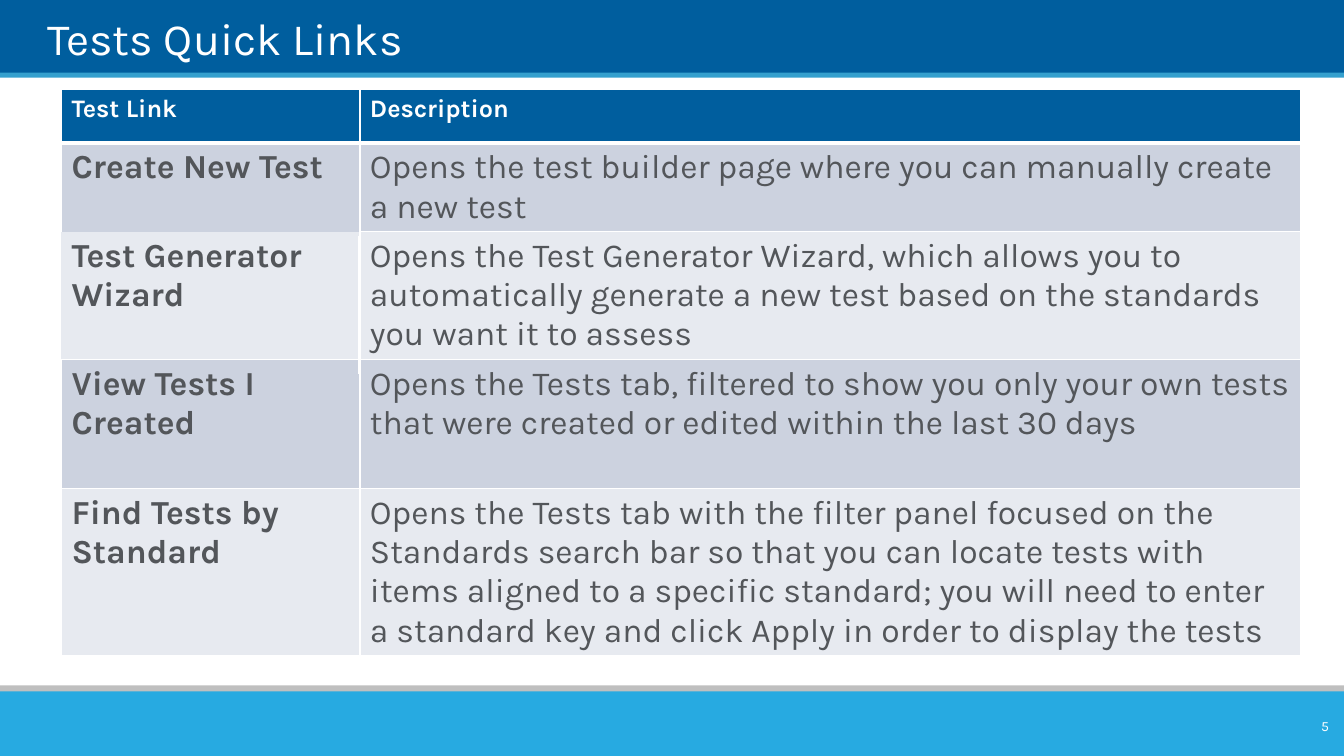
"""Build the Tests Quick Links slide."""
from dataclasses import dataclass

from lxml import etree
from pptx import Presentation
from pptx.dml.color import RGBColor
from pptx.enum import shapes, text
from pptx.oxml import ns
from pptx.util import Inches, Pt


@dataclass(frozen=True)
class Theme:
    """Colours, font and type sizes."""
    font: str = "Karla"
    navy: str = "005E9E"
    rule: str = "35A0CE"
    grey: str = "BFBFBF"
    sky: str = "27AAE1"
    white: str = "FFFFFF"
    ink: str = "53565A"
    odd_row: str = "CCD2DF"
    even_row: str = "E7EAF0"
    title_size: int = 32
    body_size: int = 24
    header_size: int = 18
    number_size: int = 10


@dataclass(frozen=True)
class Band:
    """A full-width colour band."""
    top: float
    height: float
    color: str


@dataclass(frozen=True)
class Label:
    """A text box with its format."""
    wording: str
    box: tuple
    size: int
    anchor: text.MSO_ANCHOR
    align: text.PP_ALIGN
    margins: tuple


@dataclass(frozen=True)
class QuickLink:
    """A table row with its height."""
    name: str
    description: str
    height: float
    bordered: bool = True


THEME = Theme()
SLIDE_WIDTH = 13.33
BANDS = (
    Band(-0.01, 0.75, THEME.navy),
    Band(0.72, 0.05, THEME.rule),
    Band(6.8, 0.14, THEME.grey),
    Band(6.86, 0.64, THEME.sky),
)
LABELS = (
    Label("Tests Quick Links", (0.47, 0.07, 12.43, 0.57), THEME.title_size,
          text.MSO_ANCHOR.BOTTOM, text.PP_ALIGN.LEFT, (0, 0, 0, 0)),
    Label("5", (12.51, 7.05, 0.77, 0.3), THEME.number_size,
          text.MSO_ANCHOR.MIDDLE, text.PP_ALIGN.RIGHT, (0.1, 0.05, 0.1, 0.05)),
)
COLUMNS = (2.96, 9.33)
QUICK_LINKS = (
    QuickLink("Test Link", "Description", 0.53),
    QuickLink("Create New Test",
              "Opens the test builder page where you can manually create a new test", 0.88),
    QuickLink("Test Generator Wizard",
              "Opens the Test Generator Wizard, which allows you to automatically "
              "generate a new test based on the standards you want it to assess",
              1.27, bordered=False),
    QuickLink("View Tests I Created",
              "Opens the Tests tab, filtered to show you only your own tests "
              "that were created or edited within the last 30 days", 1.28),
    QuickLink("Find Tests by Standard",
              "Opens the Tests tab with the filter panel focused on the Standards search bar "
              "so that you can locate tests with items aligned to a specific standard; you will "
              "need to enter a standard key and click Apply in order to display the tests", 1.65),
)


def write(paragraph, wording: str, color: str, size: int, bold: bool = False) -> None:
    """Add one formatted run."""
    run = paragraph.add_run()
    run.text = wording
    for attribute, value in {"name": THEME.font, "size": Pt(size), "bold": bold}.items():
        setattr(run.font, attribute, value)
    run.font.color.rgb = RGBColor.from_string(color)


def draw_band(slide, band: Band) -> None:
    """Draw a colour band."""
    stripe = slide.shapes.add_shape(shapes.MSO_SHAPE.RECTANGLE, Inches(0), Inches(band.top),
                                    Inches(SLIDE_WIDTH), Inches(band.height))
    stripe.shadow.inherit = False
    stripe.fill.solid()
    stripe.fill.fore_color.rgb = RGBColor.from_string(band.color)
    stripe.line.fill.background()


def draw_label(slide, label: Label) -> None:
    """Draw a text box."""
    frame = slide.shapes.add_textbox(*map(Inches, label.box)).text_frame
    left, top, right, bottom = map(Inches, label.margins)
    formats = {"word_wrap": True, "vertical_anchor": label.anchor, "margin_left": left,
               "margin_top": top, "margin_right": right, "margin_bottom": bottom}
    for attribute, value in formats.items():
        setattr(frame, attribute, value)
    frame.paragraphs[0].alignment = label.align
    write(frame.paragraphs[0], label.wording, THEME.white, label.size)


def set_borders(cell, bordered: bool, bottom_width: int) -> None:
    """Give a cell white borders, or none."""
    properties = cell._tc.get_or_add_tcPr()
    for side, width in {"L": 1, "R": 1, "T": 1, "B": bottom_width}.items():
        border = etree.SubElement(properties, ns.qn(f"a:ln{side}"), w=str(Pt(width)))
        if bordered:
            paint = etree.SubElement(border, ns.qn("a:solidFill"))
            etree.SubElement(paint, ns.qn("a:srgbClr"), val=THEME.white)
        else:
            etree.SubElement(border, ns.qn("a:noFill"))


def draw_table(slide) -> None:
    """Draw the table of quick links."""
    height = sum(link.height for link in QUICK_LINKS)
    table = slide.shapes.add_table(len(QUICK_LINKS), len(COLUMNS), Inches(0.61), Inches(0.89),
                                   Inches(sum(COLUMNS)), Inches(height)).table
    for column, width in zip(table.columns, COLUMNS):
        column.width = Inches(width)
    for index, link in enumerate(QUICK_LINKS):
        header = index == 0
        table.rows[index].height = Inches(link.height)
        shade = THEME.navy if header else THEME.odd_row if index % 2 else THEME.even_row
        for column, wording in enumerate((link.name, link.description)):
            cell = table.cell(index, column)
            set_borders(cell, link.bordered or column > 0, 3 if header else 1)
            cell.fill.solid()
            cell.fill.fore_color.rgb = RGBColor.from_string(shade)
            write(cell.text_frame.paragraphs[0], wording,
                  THEME.white if header else THEME.ink,
                  THEME.header_size if header else THEME.body_size,
                  bold=header or column == 0)


def draw_divider(slide) -> None:
    """Draw the white line between the columns."""
    divider = slide.shapes.add_connector(shapes.MSO_CONNECTOR.STRAIGHT, Inches(3.56),
                                         Inches(2.34), Inches(3.56), Inches(3.71))
    divider.line.width = Pt(1)
    divider.line.color.rgb = RGBColor.from_string(THEME.white)
    etree.SubElement(divider._element.spPr, ns.qn("a:effectLst"))


def main() -> None:
    """Build and save the presentation."""
    presentation = Presentation()
    presentation.slide_width = Inches(SLIDE_WIDTH)
    presentation.slide_height = Inches(7.5)
    slide = presentation.slides.add_slide(presentation.slide_layouts[6])
    for band in BANDS:
        draw_band(slide, band)
    draw_table(slide)
    draw_divider(slide)
    for label in LABELS:
        draw_label(slide, label)
    presentation.save("out.pptx")


if __name__ == "__main__":
    main()
